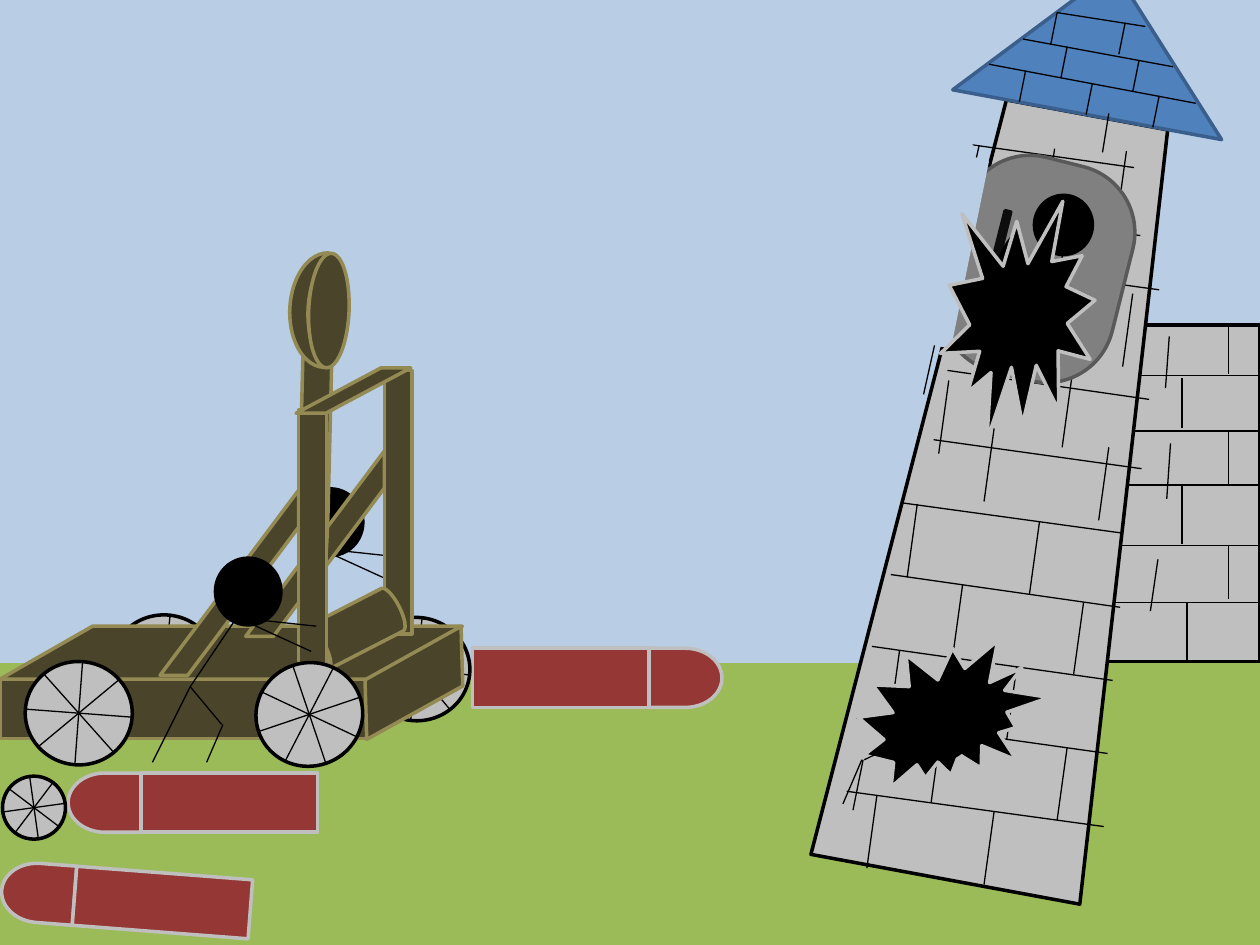
"""Build a slide showing a catapult attacking a leaning stone tower."""
from math import cos, radians, sin

from lxml import etree
from pptx import Presentation
from pptx.dml.color import RGBColor
from pptx.enum.shapes import MSO_CONNECTOR, MSO_SHAPE
from pptx.oxml.ns import qn
from pptx.util import Inches, Pt

STRAIGHT = MSO_CONNECTOR.STRAIGHT
RECT = MSO_SHAPE.RECTANGLE
OVAL = MSO_SHAPE.OVAL
PROCESS = MSO_SHAPE.FLOWCHART_PROCESS
DELAY = MSO_SHAPE.FLOWCHART_DELAY
SLANTED = MSO_SHAPE.FLOWCHART_DATA
STRIPE = MSO_SHAPE.DIAGONAL_STRIPE
MOON = MSO_SHAPE.MOON
CAN = MSO_SHAPE.CAN
PARALLELOGRAM = MSO_SHAPE.PARALLELOGRAM
TOWER = MSO_SHAPE.FLOWCHART_MANUAL_OPERATION
ROOF = MSO_SHAPE.FLOWCHART_EXTRACT
ROUNDED = MSO_SHAPE.ROUNDED_RECTANGLE
PLUS = MSO_SHAPE.MATH_PLUS
DISC = MSO_SHAPE.FLOWCHART_CONNECTOR
ARC = MSO_SHAPE.ARC
BURST = MSO_SHAPE.EXPLOSION1
WIDE_BURST = MSO_SHAPE.EXPLOSION2

COLORS = {
    "grass": "9BBB59", "sky": "B9CDE5", "stone": "BFBFBF", "black": "000000",
    "red": "953735", "wood": "4A452A", "wood edge": "948A54",
    "roof": "4F81BD", "roof edge": "3A5F8C",
    "window": "808080", "window edge": "595959", "bars": "0D0D0D",
}


def rgb(name):
    """Return the named colour."""
    return RGBColor.from_string(COLORS[name])


def add_form(shapes, kind, box, fill, edge, turn=0, adjust=(), width=2):
    """Add a preset shape; a fill of None leaves it open."""
    form = shapes.add_shape(kind, *map(Inches, box))
    form.shadow.inherit = False
    if fill:
        form.fill.solid()
        form.fill.fore_color.rgb = rgb(fill)
    else:
        form.fill.background()
    form.line.color.rgb = rgb(edge)
    form.line.width = Pt(width)
    form.rotation = turn
    for index, value in enumerate(adjust):
        form.adjustments[index] = value


def add_line(shapes, x1, y1, x2, y2):
    """Add a thin black line."""
    line = shapes.add_connector(STRAIGHT, *map(Inches, (x1, y1, x2, y2)))
    line.line.color.rgb = rgb("black")
    line.line.width = Pt(0.75)
    etree.SubElement(line._element.spPr, qn("a:effectLst"))


def add_lines(shapes, segments):
    """Add a thin black line for each segment."""
    for segment in segments:
        add_line(shapes, *segment)


def add_joints(shapes, starts, dx, dy):
    """Add parallel brick joints from the given starts."""
    add_lines(shapes, [(x, y, x + dx, y + dy) for x, y in starts])


def add_wood(shapes, kind, box, turn=0, adjust=()):
    """Add a wooden part."""
    add_form(shapes, kind, box, "wood", "wood edge", turn, adjust)


def add_wheel(slide, left, top, width, height, turn):
    """Add a wheel with four spokes across it, 45 degrees apart."""
    wheel = slide.shapes.add_group_shape().shapes
    add_form(wheel, OVAL, (left, top, width, height), "stone", "black", turn)
    cx, cy, tilt = left + width / 2, top + height / 2, radians(turn)
    for angle in map(radians, (45, 90, 135, 0)):
        x, y = width / 2 * cos(angle), height / 2 * sin(angle)
        dx = x * cos(tilt) - y * sin(tilt)
        dy = x * sin(tilt) + y * cos(tilt)
        add_line(wheel, cx + dx, cy + dy, cx - dx, cy - dy)


def add_rocket(slide, cx, cy, turn):
    """Add a rocket around its centre, its nose pointing along the turn."""
    rocket = slide.shapes.add_group_shape().shapes
    height, tilt = 0.47, radians(turn)
    for kind, width, offset in ((DELAY, 0.58, 0.7), (RECT, 1.4, -0.29)):
        left = cx + offset * cos(tilt) - width / 2
        top = cy + offset * sin(tilt) - height / 2
        add_form(rocket, kind, (left, top, width, height), "red", "stone", turn)


def add_soldier(slide, x, y):
    """Add a stick figure whose hip is at the given point."""
    soldier = slide.shapes.add_group_shape().shapes
    limbs = ((0, 0, -0.3, 0.6), (0, 0, 0.25, 0.3), (0.26, 0.3, 0.13, 0.6),
             (0, 0, 0.37, -0.55), (0.37, -0.55, 0.96, -0.28),
             (0.35, -0.55, 1, -0.48))
    add_lines(soldier, [(x + a, y + b, x + c, y + d) for a, b, c, d in limbs])
    add_form(soldier, OVAL, (x + 0.2, y - 1.02, 0.52, 0.53), "black", "black")


def add_frame(slide, x, y):
    """Add a post with its diagonal brace."""
    frame = slide.shapes.add_group_shape().shapes
    add_wood(frame, STRIPE, (x, y + 0.64, 1.1, 1.47), 180, (0.8,))
    add_wood(frame, PROCESS, (x + 1.1, y, 0.22, 2.09))


def add_wall(slide):
    """Add the landscape and the brick wall."""
    shapes = slide.shapes
    add_form(shapes, RECT, (0, 5.25, 10, 2.25), "grass", "grass")
    add_form(shapes, RECT, (0, 0, 10, 5.25), "sky", "sky")
    add_form(shapes, PROCESS, (8, 2.58, 2, 2.67), "stone", "black")
    courses = ((8.65, 2.98), (8.65, 3.42), (8.7, 3.85), (8.7, 4.33), (8.79, 4.78))
    add_lines(shapes, [(x, y, 10, y) for x, y in courses])
    joints = ((9.42, 4.78, 5.25), (9.75, 4.33, 4.75), (9.38, 3.85, 4.32),
              (9.75, 3.42, 3.86), (9.38, 3, 3.4), (9.75, 2.58, 2.97))
    add_lines(shapes, [(x, top, x, bottom) for x, top, bottom in joints])


def add_catapult(slide):
    """Add the catapult with its crew, wheels and ammunition."""
    add_rocket(slide, 1.53, 6.37, 180)
    add_wheel(slide, 0.02, 6.16, 0.5, 0.5, 352.1)
    add_rocket(slide, 1, 7.14, 184.4)
    add_rocket(slide, 4.74, 5.38, 0)
    add_soldier(slide, 2.16, 4.9)
    add_wheel(slide, 2.88, 4.9, 0.85, 0.82, 186.4)
    add_wheel(slide, 0.88, 4.88, 0.85, 0.82, 186.4)
    base = slide.shapes.add_group_shape().shapes
    add_wood(base, PROCESS, (0, 5.39, 2.92, 0.47))
    add_wood(base, SLANTED, (0, 4.97, 3.67, 0.42))
    add_wood(base, SLANTED, (2.74, 5.21, 1.09, 0.42), 150.9)
    add_frame(slide, 1.95, 2.94)
    add_wheel(slide, 0.2, 5.25, 0.85, 0.82, 184.3)
    arm = slide.shapes.add_group_shape().shapes
    add_wood(arm, DELAY, (1.32, 3.88, 2.34, 0.23), 91.4)
    add_wood(arm, MOON, (2.3, 2, 0.29, 0.91), 2.5)
    add_wood(arm, OVAL, (2.45, 2.01, 0.32, 0.91), 2.5)
    add_wood(slide.shapes, CAN, (2.63, 4.6, 0.38, 0.78), 242.8, (0.31,))
    add_frame(slide, 1.27, 3.25)
    add_wheel(slide, 2.03, 5.26, 0.85, 0.82, 161.3)
    add_soldier(slide, 1.51, 5.45)
    add_wood(slide.shapes, PARALLELOGRAM, (2.35, 2.92, 0.91, 0.36), 0, (1.87,))


def add_tower(slide):
    """Add the leaning tower with its roof, bricks, window and damage."""
    tower = slide.shapes.add_group_shape().shapes
    add_form(tower, TOWER, (6.98, 0.86, 2.17, 6.17), "stone", "black", 190.5)
    add_form(tower, ROOF, (7.65, -0.25, 2.17, 1.17), "roof", "roof edge", 10.5)
    add_lines(tower, ((7.85, 0.51, 9.49, 0.82), (8.12, 0.31, 9.31, 0.53),
                      (8.39, 0.1, 9.09, 0.21)))
    add_joints(tower, ((8.14, 0.56), (8.67, 0.66), (9.2, 0.76), (8.47, 0.37),
                       (9.04, 0.48), (8.39, 0.1), (8.93, 0.18)), -0.05, 0.25)
    add_lines(tower, ((6.72, 6.28, 8.76, 6.56), (6.8, 5.7, 8.79, 5.98),
                      (6.92, 5.13, 8.83, 5.4), (7.07, 4.56, 8.89, 4.82),
                      (7.15, 3.99, 8.9, 4.23), (7.41, 3.49, 9.06, 3.72),
                      (7.72, 1.15, 9, 1.33)))
    add_form(tower, RECT, (7.22, 1.12, 0.33, 2), "sky", "sky", 12.1)
    add_lines(tower, ((7.33, 3.13, 7.77, 1.16), (7.52, 2.94, 9.12, 3.17),
                      (7.67, 2.09, 9.2, 2.3), (7.77, 1.69, 9.05, 1.87),
                      (8.8, 0.9, 8.75, 1.21)))
    add_joints(tower, ((6.96, 6.31), (7.89, 6.44), (8.47, 5.93), (8.07, 5.29),
                       (8.6, 4.78), (8.25, 4.14), (8.8, 3.55), (8.51, 2.97),
                       (8.99, 2.33), (8.57, 1.82), (8.94, 1.2), (7.47, 5.79),
                       (7.14, 5.16), (7.64, 4.64), (7.28, 4), (7.89, 3.4),
                       (7.53, 3.02), (8.37, 1.18)), -0.08, 0.58)
    add_form(tower, ROUNDED, (7.55, 1.26, 1.38, 1.75), "window", "window edge",
             14.1, (0.39,))
    add_form(tower, PLUS, (7.75, 1.51, 0.29, 1.17), "bars", "bars", 14.1, (0.16,))
    add_lines(tower, ((8.05, 2.85, 8.3, 2.48), (8.38, 2.94, 8.32, 2.49),
                      (8.32, 2.48, 8.44, 2), (9.19, 4.44, 9.13, 4.85),
                      (9.29, 3.52, 9.26, 3.96), (9.28, 2.67, 9.25, 3.08),
                      (7.95, 2.25, 8.31, 2.06), (8.34, 2.04, 8.45, 2.35)))
    add_form(tower, DISC, (8.21, 1.55, 0.46, 0.47), "black", "black", 8)
    add_form(tower, RECT, (7.22, 1.22, 0.47, 1.5), "sky", "sky", 11.5)
    add_form(tower, ARC, (7.86, 1.82, 1.21, 0.99), None, "black", 230.7,
             (158.8, 215.58), 3)
    add_line(tower, 8.09, 2.27, 8.45, 2.35)
    add_form(tower, WIDE_BURST, (6.82, 5.04, 1.48, 1.27), "black", "stone", 8)
    add_lines(tower, ((8.07, 1.85, 8.09, 2.27), (8.1, 2.22, 8.11, 2.66)))
    add_form(tower, OVAL, (7.21, 5.53, 0.52, 0.47), "black", "black", 71.6)
    add_lines(tower, ((7.25, 5.84, 6.86, 6.03), (6.84, 6.03, 6.69, 6.38),
                      (6.85, 6.03, 6.77, 6.43)))
    add_form(tower, BURST, (7.5, 1.56, 1.19, 1.97), "black", "stone", 8)


def main():
    """Build and save the slide."""
    deck = Presentation()
    deck.slide_width, deck.slide_height = Inches(10), Inches(7.5)
    slide = deck.slides.add_slide(deck.slide_layouts[6])
    add_wall(slide)
    add_catapult(slide)
    add_tower(slide)
    deck.save("out.pptx")


if __name__ == "__main__":
    main()
